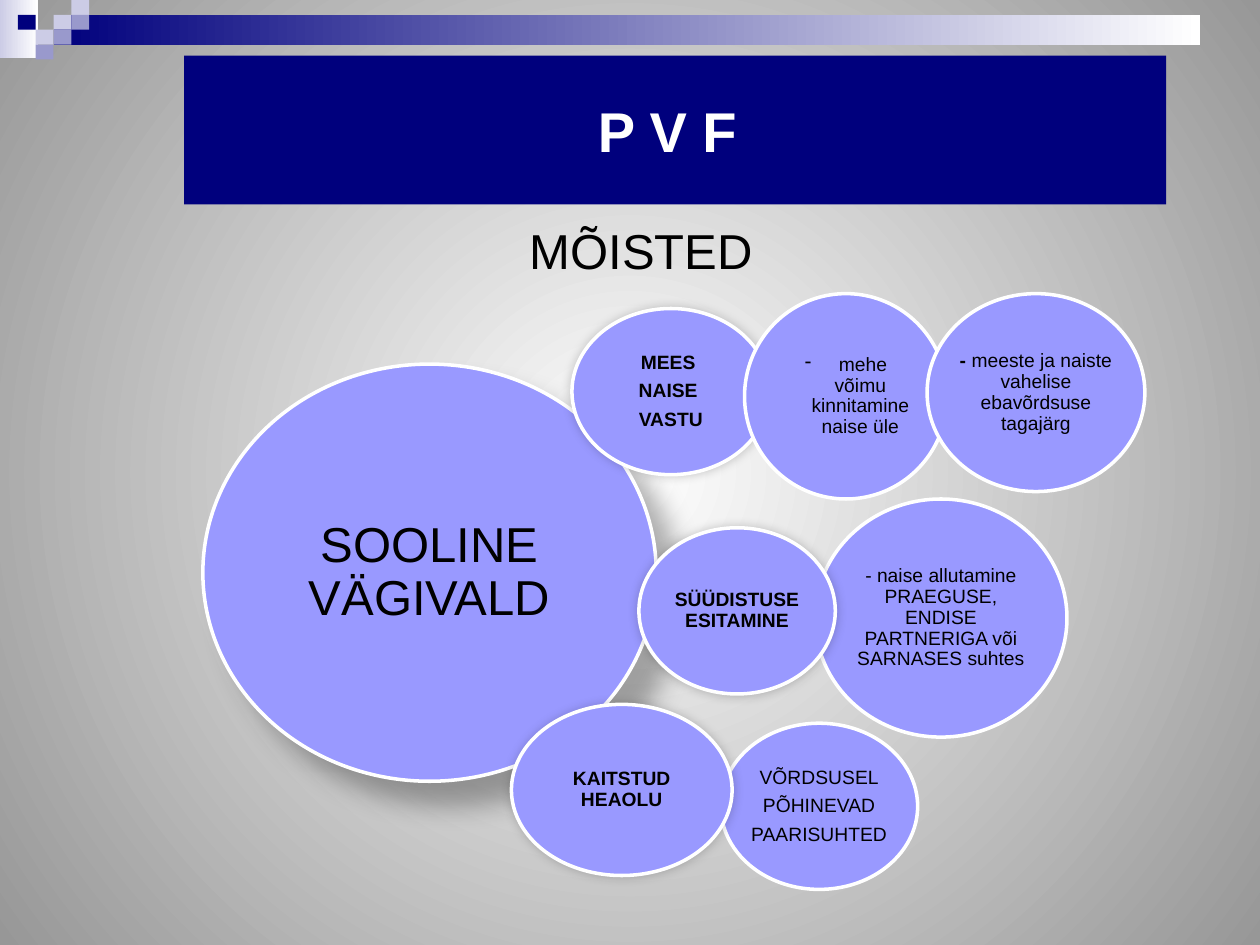
from dataclasses import dataclass

from lxml.etree import SubElement
from pptx import Presentation
from pptx.dml.color import RGBColor
from pptx.enum.shapes import MSO_SHAPE as Shape
from pptx.enum.text import MSO_ANCHOR as Anchor, PP_ALIGN as Align
from pptx.oxml.ns import qn
from pptx.util import Cm, Pt


@dataclass(frozen=True)
class Theme:
    font: str = "Arial"
    navy: str = "00007D"
    lilac: str = "9999FF"
    pale: str = "CCCCE6"
    dusk: str = "9999CC"
    grey: str = "979797"
    white: str = "FFFFFF"
    black: str = "000000"
    title_size: int = 32
    large_size: int = 28
    small_size: int = 11


THEME = Theme()
# Shadows: opacity in percent, blur and distance in points, angle in degrees
DEEP_SHADOW = (30, 15, 18, 45)
SOFT_SHADOW = (20, 6, 0, 315)


def write_text(frame, paragraphs, size=THEME.small_size, color=THEME.black, bold=False,
               line_spacing=None, space_after=None, bullet=None, inset=None):
    """Fill a frame; a paragraph is a string or a list of (text, bold) runs."""
    frame.word_wrap = True
    if inset is not None:
        frame.margin_left = frame.margin_right = Cm(inset)
        frame.margin_top = frame.margin_bottom = 0
    for index, content in enumerate(paragraphs):
        paragraph = frame.paragraphs[0] if index == 0 else frame.add_paragraph()
        paragraph.alignment = Align.CENTER
        paragraph.line_spacing = line_spacing
        if space_after is not None:
            paragraph.space_after = Pt(space_after)
        if bullet:
            properties = paragraph._p.get_or_add_pPr()
            properties.set("marL", str(Cm(0.58)))
            properties.set("indent", str(-Cm(0.58)))
            SubElement(properties, qn("a:buChar"), char=bullet)
        runs = [(content, bold)] if isinstance(content, str) else content
        for text, run_bold in runs:
            run = paragraph.add_run()
            run.text = text
            run.font.name = THEME.font
            run.font.size = Pt(size)
            run.font.bold = run_bold
            run.font.color.rgb = RGBColor.from_string(color)


def fill_gradient(fill, start, end):
    fill.gradient()
    for stop, color in zip(fill.gradient_stops, (start, end)):
        stop.color.rgb = RGBColor.from_string(color)
        stop.position = 0 if color == start else 1


class SlideBuilder:
    def __init__(self, presentation, theme):
        self.theme = theme
        self.slide = presentation.slides.add_slide(presentation.slide_layouts[5])

    def background(self, center, edge):
        fill = self.slide.background.fill
        fill_gradient(fill, center, edge)
        gradient = self.slide._element.cSld.find(".//" + qn("a:gradFill"))
        gradient.remove(gradient.find(qn("a:lin")))
        circle = SubElement(gradient, qn("a:path"))
        circle.set("path", "circle")
        SubElement(circle, qn("a:fillToRect"),
                   {side: "50000" for side in ("l", "t", "r", "b")})

    def shape(self, kind, box, color, end_color=None):
        shape = self.slide.shapes.add_shape(kind, *map(Cm, box))
        shape.shadow.inherit = False
        shape.line.fill.background()
        if end_color:
            fill_gradient(shape.fill, color, end_color)
            shape.fill.gradient_angle = 0
        else:
            shape.fill.solid()
            shape.fill.fore_color.rgb = RGBColor.from_string(color)
        return shape

    def title(self, text, box):
        title = self.slide.shapes.title
        title.left, title.top, title.width, title.height = map(Cm, box)
        title.fill.solid()
        title.fill.fore_color.rgb = RGBColor.from_string(self.theme.navy)
        title.text_frame.vertical_anchor = Anchor.MIDDLE
        write_text(title.text_frame, [text], size=self.theme.title_size,
                   color=self.theme.white, bold=True)

    def heading(self, text, box):
        text_box = self.slide.shapes.add_textbox(*map(Cm, box))
        write_text(text_box.text_frame, [text], size=self.theme.large_size)

    def bubble(self, box, paragraphs, shadow=None, size=THEME.small_size, inset=0, **style):
        oval = self.shape(Shape.OVAL, box, self.theme.lilac)
        oval.line.color.rgb = RGBColor.from_string(self.theme.white)
        oval.line.width = Pt(2)
        if shadow:
            self.add_shadow(oval, *shadow)
        oval.text_frame.vertical_anchor = Anchor.MIDDLE
        write_text(oval.text_frame, paragraphs, size=size, inset=inset,
                   line_spacing=0.9, space_after=round(size * 0.4, 1), **style)

    def add_shadow(self, shape, opacity, blur, distance, angle):
        effects = shape._element.spPr.find(qn("a:effectLst"))
        outer = SubElement(effects, qn("a:outerShdw"), blurRad=str(Pt(blur)),
                           dist=str(Pt(distance)), dir=str(angle * 60000),
                           algn="ctr", rotWithShape="0")
        color = SubElement(outer, qn("a:srgbClr"), val=self.theme.black)
        SubElement(color, qn("a:alpha"), val=str(opacity * 1000))


def main():
    presentation = Presentation()
    presentation.slide_width, presentation.slide_height = Cm(25.4), Cm(19.05)
    builder = SlideBuilder(presentation, THEME)
    builder.background(THEME.white, THEME.grey)

    # Corner ornament: two gradient bars and a grid of small tiles
    builder.shape(Shape.RECTANGLE, (0, 0, 0.76, 1.17), THEME.pale, THEME.white)
    builder.shape(Shape.RECTANGLE, (1.09, 0.3, 23.11, 0.61), THEME.navy, THEME.white)
    tile_width, tile_height = 0.36, 0.3
    tiles = [(3, 1, THEME.pale), (4, 0, THEME.pale), (4, 1, THEME.dusk),
             (2, 2, THEME.pale), (1, 1, THEME.navy), (3, 2, THEME.dusk),
             (2, 3, THEME.dusk)]
    for column, row, color in tiles:
        builder.shape(Shape.RECTANGLE, (column * tile_width, row * tile_height,
                                        tile_width, tile_height), color)

    builder.title("P V F ", (3.71, 1.12, 19.8, 3))

    # Main concept and its related bubbles, from back to front
    builder.bubble((4.09, 7.34, 9.14, 8.41), ["SOOLINE VÄGIVALD"],
                   shadow=DEEP_SHADOW, size=THEME.large_size)
    builder.bubble((11.53, 6.22, 3.99, 3.35), ["MEES ", "NAISE ", "VASTU"],
                   shadow=SOFT_SHADOW, bold=True)
    builder.bubble((15.01, 5.92, 4.09, 4.14), [" mehe võimu kinnitamine naise üle"],
                   bullet="-", inset=0.06)
    builder.bubble((14.53, 14.58, 3.97, 3.35), ["VÕRDSUSEL", "PÕHINEVAD", "PAARISUHTED"])
    builder.bubble((10.31, 14.2, 4.45, 3.45), ["KAITSTUD HEAOLU"],
                   shadow=SOFT_SHADOW, bold=True)
    builder.bubble((16.43, 10.06, 5.08, 4.8),
                   ["- naise allutamine PRAEGUSE, ENDISE PARTNERIGA või SARNASES suhtes"])
    builder.bubble((12.88, 10.64, 3.96, 3.35), ["SÜÜDISTUSE ESITAMINE"],
                   shadow=SOFT_SHADOW, bold=True)
    builder.bubble((18.69, 5.92, 4.39, 3.99),
                   [[("- ", True), ("meeste ja naiste vahelise ebavõrdsuse tagajärg", False)]])

    builder.heading("MÕISTED", (1.5, 4.32, 22.86, 1.83))
    presentation.save("out.pptx")


if __name__ == "__main__":
    main()
